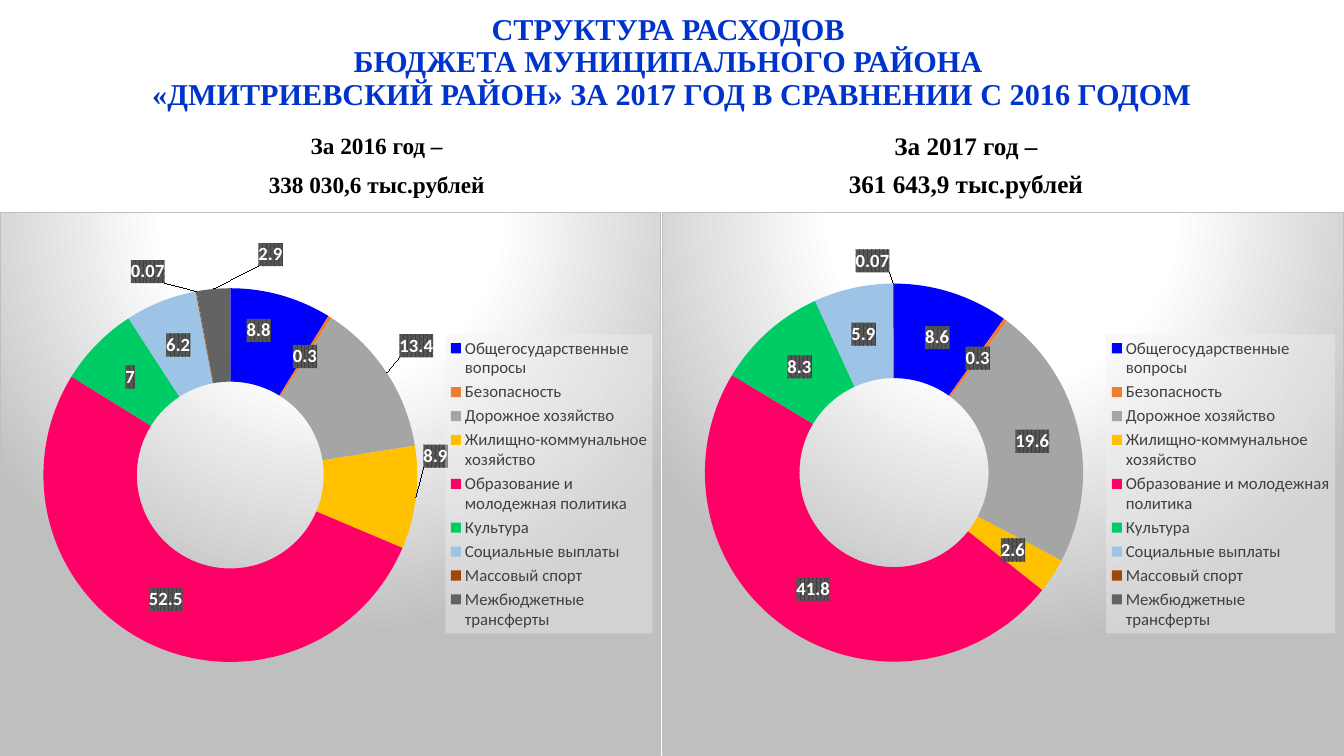
from copy import deepcopy

from lxml.etree import SubElement
from pptx import Presentation
from pptx.chart.data import CategoryChartData
from pptx.dml.color import RGBColor
from pptx.enum.chart import XL_CHART_TYPE as ChartType, XL_LEGEND_POSITION as LegendSide
from pptx.enum.text import MSO_ANCHOR as Anchor, PP_ALIGN as Align
from pptx.oxml import parse_xml
from pptx.oxml.ns import nsdecls, qn
from pptx.util import Pt

# Content
HEADING = ("СТРУКТУРА РАСХОДОВ \vБЮДЖЕТА МУНИЦИПАЛЬНОГО РАЙОНА \v"
           "«ДМИТРИЕВСКИЙ РАЙОН» ЗА 2017 ГОД В СРАВНЕНИИ С 2016 ГОДОМ")
SECTORS = [
    ("Общегосударственные вопросы", "0000FF"),
    ("Безопасность", "ED7D31"),
    ("Дорожное хозяйство", "A5A5A5"),
    ("Жилищно-коммунальное хозяйство", "FFC000"),
    ("Образование и молодежная политика", "FF0066"),
    ("Культура", "00CC66"),
    ("Социальные выплаты", "9DC3E6"),
    ("Массовый спорт", "9E480E"),
    ("Межбюджетные трансферты", "636363"),
]
# moved: sector index -> label shift as a share of the chart; None hides the label
YEARS = [
    dict(caption=["За 2016 год –", "338 030,6 тыс.рублей"],
         caption_left=66, caption_width=406, caption_size=16.6, spacing=0.9,
         shares=[8.8, 0.3, 13.4, 8.9, 52.5, 7, 6.2, 0.07, 2.9],
         width=472.5, ring=(0.065, 0.14, 0.566, 0.688),
         key=(0.673, 0.226, 0.314, 0.548),
         moved={0: (-0.015, -0.018), 2: (0.104, -0.097), 3: (0.1, -0.066),
                7: (-0.086, -0.121), 8: (0.08, -0.149)}),
    dict(caption=["За 2017 год –", "361 643,9 тыс.рублей"],
         caption_left=486, caption_width=408, caption_size=18, spacing=0.8,
         shares=[8.6, 0.3, 19.6, 2.6, 41.8, 8.3, 5.9, 0.07, 0],
         width=487.5, ring=(0.063, 0.131, 0.555, 0.697),
         key=(0.653, 0.226, 0.336, 0.548),
         moved={7: (-0.031, -0.129), 8: None}),
]
THEME = dict(heading="0033CC", ink="000000", key_ink="404040", label="FFFFFF",
             label_dark="404040", label_light="595959", key_back="F2F2F2",
             light="FFFFFF", grey="BFBFBF",
             serif="Times New Roman", sans="Calibri",
             heading_size=21.6, chart_size=10, key_size=12, label_size=13.3)
WIDTH, HEIGHT = 960, 540
CAPTION_TOP, CAPTION_HEIGHT, CHART_TOP = 90, 55.4, 151.2


def style(font, face, size, color, bold=False):
    font.name, font.size, font.bold = face, Pt(size), bold
    font.color.rgb = RGBColor.from_string(color)


def add_text(slide, lines, box, *, size, color, anchor, spacing=0.9, before=0):
    frame = slide.shapes.add_textbox(*map(Pt, box)).text_frame
    frame.word_wrap, frame.vertical_anchor = True, anchor
    for number, line in enumerate(lines):
        paragraph = frame.add_paragraph() if number else frame.paragraphs[0]
        paragraph.text = line
        paragraph.alignment = Align.CENTER
        paragraph.line_spacing, paragraph.space_before = spacing, Pt(before)
        for run in paragraph.runs:
            style(run.font, THEME["serif"], size, color, bold=True)


def solid(color, inner=""):
    return f'<a:solidFill><a:srgbClr val="{color}">{inner}</a:srgbClr></a:solidFill>'


def fill_xml(content):
    return parse_xml(f'<c:spPr {nsdecls("c", "a")}>{content}</c:spPr>')


def layout_xml(x, y, w=None, h=None, target=""):
    modes, size = "", ""
    if w is not None:
        modes = '<c:xMode val="edge"/><c:yMode val="edge"/>'
        size = f'<c:w val="{w}"/><c:h val="{h}"/>'
    return parse_xml(f'<c:layout {nsdecls("c")}><c:manualLayout>{target}{modes}'
                     f'<c:x val="{x}"/><c:y val="{y}"/>{size}</c:manualLayout></c:layout>')


def label_ring(series, moved):
    labels = series.data_labels
    labels.show_value = True
    style(labels.font, THEME["sans"], THEME["label_size"], THEME["label"], bold=True)
    root = labels._element
    text = root.find(qn("c:txPr"))
    back = fill_xml(
        f'<a:pattFill prst="pct75"><a:fgClr><a:srgbClr val="{THEME["label_dark"]}"/></a:fgClr>'
        f'<a:bgClr><a:srgbClr val="{THEME["label_light"]}"/></a:bgClr></a:pattFill>')
    text.addprevious(back)
    for place, (index, shift) in enumerate(moved.items()):
        label = parse_xml(f'<c:dLbl {nsdecls("c")}><c:idx val="{index}"/></c:dLbl>')
        if shift is None:
            SubElement(label, qn("c:delete")).set("val", "1")
        else:
            label.extend([layout_xml(*shift), deepcopy(back), deepcopy(text)])
            for part in ("LegendKey", "Val", "CatName", "SerName", "Percent", "BubbleSize"):
                SubElement(label, qn(f"c:show{part}")).set("val", str(int(part == "Val")))
        root.insert(place, label)


def add_ring(slide, left, year):
    data = CategoryChartData()
    data.categories = [name for name, _ in SECTORS]
    data.add_series("Series 1", year["shares"])
    box = map(Pt, (left, CHART_TOP, year["width"], HEIGHT - CHART_TOP))
    chart = slide.shapes.add_chart(ChartType.DOUGHNUT, *box, data).chart
    chart.has_title = False
    style(chart.font, THEME["sans"], THEME["chart_size"], THEME["ink"])

    # Sectors and their labels
    plot = chart.plots[0]
    plot.vary_by_categories = True
    series = plot.series[0]
    for index, (_, color) in enumerate(SECTORS):
        fill = series.points[index].format.fill
        fill.solid()
        fill.fore_color.rgb = RGBColor.from_string(color)
    label_ring(series, year["moved"])

    # Place of the ring
    body = chart._chartSpace.find(qn("c:chart"))
    area = body.find(qn("c:plotArea"))
    for old in area.findall(qn("c:layout")):
        area.remove(old)
    area.insert(0, layout_xml(*year["ring"], target='<c:layoutTarget val="inner"/>'))
    area.find(qn("c:doughnutChart")).find(qn("c:holeSize")).set("val", "50")

    # Legend
    chart.has_legend = True
    legend = chart.legend
    legend.position, legend.include_in_layout = LegendSide.RIGHT, False
    style(legend.font, THEME["sans"], THEME["key_size"], THEME["key_ink"])
    root = legend._element
    root.find(qn("c:legendPos")).addnext(layout_xml(*year["key"]))
    root.find(qn("c:txPr")).addprevious(
        fill_xml(solid(THEME["key_back"], '<a:alpha val="39000"/>')))

    # Background glow and border
    stops = "".join(f'<a:gs pos="{pos}"><a:srgbClr val="{THEME[name]}"/></a:gs>'
                    for pos, name in ((0, "light"), (39000, "light"), (100000, "grey")))
    body.addnext(fill_xml(
        f'<a:gradFill><a:gsLst>{stops}</a:gsLst><a:path path="circle">'
        '<a:fillToRect l="50000" t="-80000" r="50000" b="180000"/></a:path></a:gradFill>'
        f'<a:ln w="9525">{solid(THEME["grey"])}</a:ln>'))


def main():
    deck = Presentation()
    deck.slide_width, deck.slide_height = Pt(WIDTH), Pt(HEIGHT)
    slide = deck.slides.add_slide(deck.slide_layouts[6])
    add_text(slide, [HEADING], (66, 0, 828, 90), size=THEME["heading_size"],
             color=THEME["heading"], anchor=Anchor.MIDDLE)
    left = 0
    for year in YEARS:
        add_text(slide, year["caption"],
                 (year["caption_left"], CAPTION_TOP, year["caption_width"], CAPTION_HEIGHT),
                 size=year["caption_size"], color=THEME["ink"], anchor=Anchor.BOTTOM,
                 spacing=year["spacing"], before=10)
        add_ring(slide, left, year)
        left += year["width"]
    deck.save("out.pptx")


if __name__ == "__main__":
    main()
